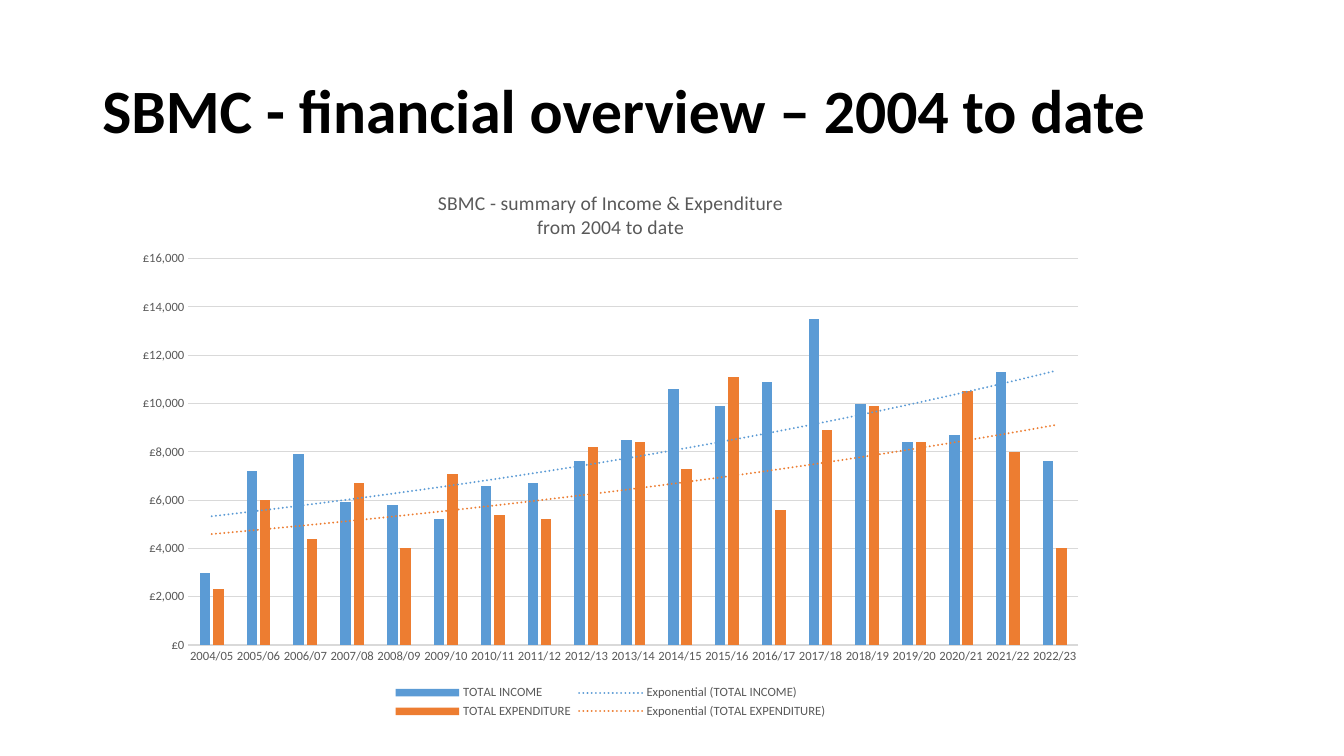
from dataclasses import dataclass

from lxml import etree
from pptx import Presentation
from pptx.chart.data import CategoryChartData
from pptx.dml.color import RGBColor
from pptx.enum.chart import XL_CHART_TYPE, XL_LEGEND_POSITION, XL_TICK_MARK
from pptx.enum.text import MSO_ANCHOR
from pptx.oxml import parse_xml
from pptx.oxml.ns import nsdecls, qn
from pptx.util import Pt

CLUSTERED = XL_CHART_TYPE.COLUMN_CLUSTERED
LEGEND_BOTTOM = XL_LEGEND_POSITION.BOTTOM
NO_TICK = XL_TICK_MARK.NONE
MIDDLE = MSO_ANCHOR.MIDDLE


@dataclass(frozen=True)
class Theme:
    """Colours, font and type sizes of the slide."""
    font: str = "Calibri"
    heading: str = "000000"
    muted: str = "595959"
    rule: str = "D9D9D9"
    income: str = "5B9BD5"
    expenditure: str = "ED7D31"
    heading_size: float = 44
    chart_title_size: float = 14
    label_size: float = 9
    rule_width: float = 0.75
    trend_width: float = 1.5


THEME = Theme()
YEARS = [f"{year}/{(year + 1) % 100:02d}" for year in range(2004, 2023)]
ACCOUNTS = [
    ("TOTAL INCOME", THEME.income,
     [3000, 7200, 7900, 5900, 5800, 5200, 6600, 6700, 7600, 8500,
      10600, 9900, 10900, 13500, 10000, 8400, 8700, 11300, 7600]),
    ("TOTAL EXPENDITURE", THEME.expenditure,
     [2300, 6000, 4400, 6700, 4000, 7100, 5400, 5200, 8200, 8400,
      7300, 11100, 5600, 8900, 9900, 8400, 10500, 8000, 4000]),
]


def style_font(font, size, color, bold=False):
    """Apply the theme font with the given size, colour and weight."""
    font.name = THEME.font
    font.size = Pt(size)
    font.bold = bold
    font.color.rgb = RGBColor.from_string(color)


def style_rule(line):
    """Draw a line as a thin grey rule."""
    line.color.rgb = RGBColor.from_string(THEME.rule)
    line.width = Pt(THEME.rule_width)


def add_heading(slide, left, top, width, height):
    """Place the slide heading in its box."""
    frame = slide.shapes.add_textbox(Pt(left), Pt(top), Pt(width), Pt(height)).text_frame
    frame.word_wrap = True
    frame.vertical_anchor = MIDDLE
    paragraph = frame.paragraphs[0]
    paragraph.line_spacing = 0.9
    heading = paragraph.add_run()
    heading.text = "SBMC - financial overview – 2004 to date"
    style_font(heading.font, THEME.heading_size, THEME.heading, bold=True)


def set_layout(parent, index, target, **fractions):
    """Fix a chart part at fractions of the chart's size."""
    for layout in parent.findall(qn("c:layout")):
        parent.remove(layout)
    layout = etree.Element(qn("c:layout"))
    manual = etree.SubElement(layout, qn("c:manualLayout"))
    if target:
        etree.SubElement(manual, qn("c:layoutTarget")).set("val", target)
    for side in ("x", "y"):
        etree.SubElement(manual, qn(f"c:{side}Mode")).set("val", "edge")
    for name, value in fractions.items():
        etree.SubElement(manual, qn(f"c:{name}")).set("val", str(value))
    parent.insert(index, layout)


def add_trend(account, color):
    """Add a dotted exponential trend line to a series."""
    trend = parse_xml(
        f'<c:trendline {nsdecls("c", "a")}><c:spPr>'
        f'<a:ln w="{Pt(THEME.trend_width)}" cap="rnd"><a:solidFill><a:srgbClr val="{color}"/>'
        '</a:solidFill><a:prstDash val="sysDot"/></a:ln></c:spPr>'
        '<c:trendlineType val="exp"/><c:dispRSqr val="0"/><c:dispEq val="0"/></c:trendline>')
    account.find(qn("c:cat")).addprevious(trend)


def add_chart_title(chart):
    """Write the two-line chart title."""
    frame = chart.chart_title.text_frame
    lines = ("SBMC - summary of Income & Expenditure", "from 2004 to date")
    for number, line in enumerate(lines):
        paragraph = frame.add_paragraph() if number else frame.paragraphs[0]
        run = paragraph.add_run()
        run.text = line
        style_font(run.font, THEME.chart_title_size, THEME.muted)
    chart.chart_title.include_in_layout = False
    title = next(chart.element.iter(qn("c:title")))
    set_layout(title, 1, None, x=0.32, y=0.04)


def style_axes(chart):
    """Format the year and pound axes."""
    years, pounds = chart.category_axis, chart.value_axis
    for axis in (years, pounds):
        axis.major_tick_mark = NO_TICK
        axis.minor_tick_mark = NO_TICK
        style_font(axis.tick_labels.font, THEME.label_size, THEME.muted)
    style_rule(years.format.line)
    style_rule(pounds.major_gridlines.format.line)
    pounds.format.line.fill.background()
    pounds.minimum_scale, pounds.maximum_scale, pounds.major_unit = 0, 16000, 2000
    pounds.tick_labels.number_format = '"£"#,##0'
    pounds.tick_labels.number_format_is_linked = False


def add_accounts_chart(slide, left, top, width, height):
    """Place the income and expenditure chart in its box."""
    accounts = CategoryChartData(number_format='"£"#,##0')
    accounts.categories = YEARS
    for name, _, amounts in ACCOUNTS:
        accounts.add_series(name, amounts)
    chart = slide.shapes.add_chart(
        CLUSTERED, Pt(left), Pt(top), Pt(width), Pt(height), accounts).chart
    style_font(chart.font, THEME.label_size, THEME.muted)
    add_chart_title(chart)
    style_axes(chart)
    columns = chart.plots[0]
    columns.vary_by_categories = False
    columns.gap_width, columns.overlap = 219, -27
    elements = list(chart.element.iter(qn("c:ser")))
    for series, element, (_, color, _) in zip(columns.series, elements, ACCOUNTS):
        series.format.fill.solid()
        series.format.fill.fore_color.rgb = RGBColor.from_string(color)
        series.invert_if_negative = False
        add_trend(element, color)
    chart.has_legend = True
    chart.legend.position = LEGEND_BOTTOM
    chart.legend.include_in_layout = False
    style_font(chart.legend.font, THEME.label_size, THEME.muted)
    plot_area = next(chart.element.iter(qn("c:plotArea")))
    set_layout(plot_area, 0, "inner", x=0.067, y=0.169, w=0.913, h=0.692)


def main():
    """Build and save the financial overview slide."""
    deck = Presentation()
    deck.slide_width, deck.slide_height = Pt(960), Pt(540)
    slide = deck.slides.add_slide(deck.slide_layouts[6])
    add_heading(slide, left=66, top=28.75, width=828, height=104.4)
    add_accounts_chart(slide, left=87.85, top=117.35, width=696.25, height=398.9)
    deck.save("out.pptx")


if __name__ == "__main__":
    main()
